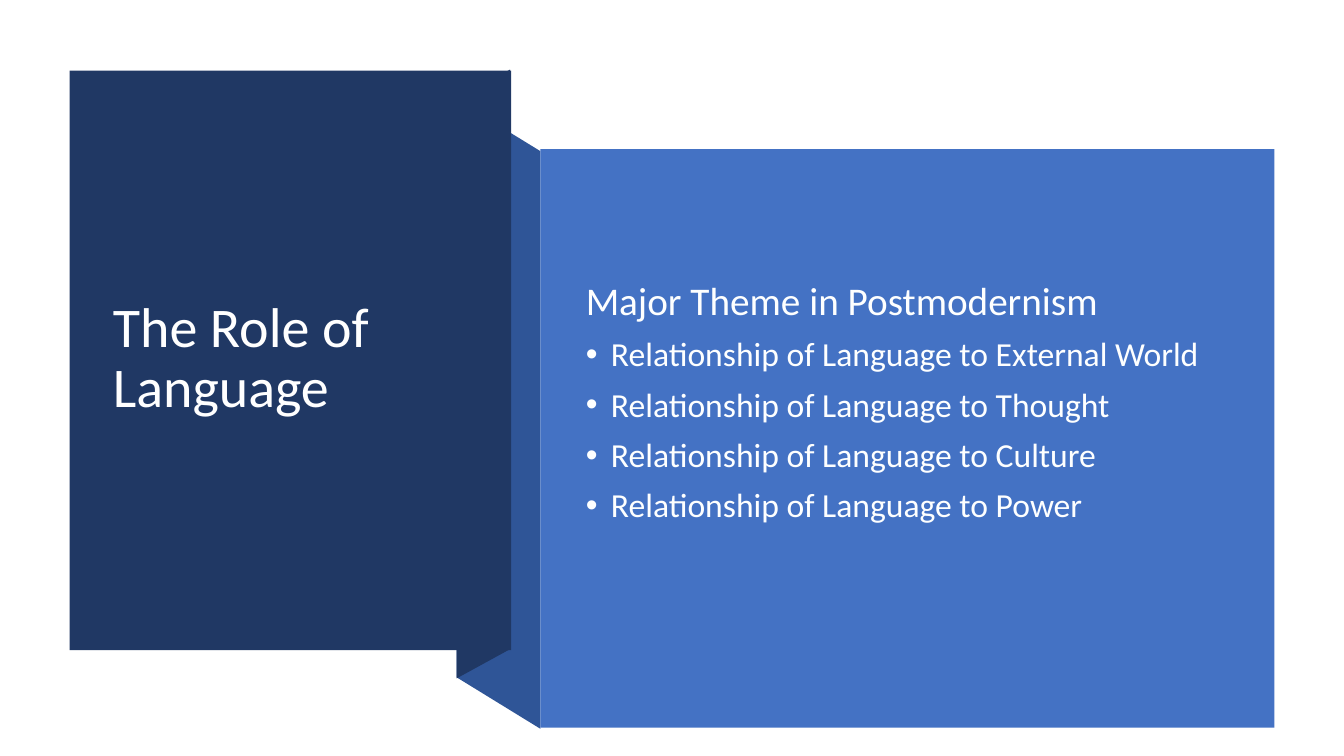
from dataclasses import dataclass

from lxml.etree import SubElement
from pptx import Presentation
from pptx.dml.color import RGBColor
from pptx.enum.shapes import MSO_SHAPE
from pptx.enum.text import MSO_ANCHOR, MSO_AUTO_SIZE, PP_ALIGN
from pptx.oxml.ns import qn
from pptx.util import Inches, Pt


@dataclass(frozen=True)
class Theme:
    """Colours and type sizes of the slide."""

    font: str = "Calibri"
    navy: str = "203864"
    fold: str = "2F5597"
    blue: str = "4472C4"
    title_color: str = "FFFFFF"
    body_color: str = "FEFFFF"
    title_size: int = 40
    lead_size: int = 28
    bullet_size: int = 24


THEME = Theme()
THEMES = ["External World", "Thought", "Culture", "Power"]


def paint(shape, color):
    """Give a shape a flat fill without line or shadow."""
    shape.shadow.inherit = False
    shape.fill.solid()
    shape.fill.fore_color.rgb = RGBColor.from_string(color)
    shape.line.fill.background()


def add_panel(page, box, color):
    """Draw a rectangle that fills the box."""
    paint(page.shapes.add_shape(MSO_SHAPE.RECTANGLE, *map(Inches, box)), color)


def add_fold(page, box, left_drop, right_drop, color):
    """Draw a slanted strip in the box, each side lowered by its drop."""
    left, top, width, height = box
    right = left + width
    side = height - max(left_drop, right_drop)
    corners = [
        (left, top + left_drop),
        (right, top + right_drop),
        (right, top + right_drop + side),
        (left, top + left_drop + side),
    ]
    points = [(Inches(x), Inches(y)) for x, y in corners]
    builder = page.shapes.build_freeform(*points[0])
    builder.add_line_segments(points[1:], close=True)
    paint(builder.convert_to_shape(), color)


def place_text(page, holder, box):
    """Move a placeholder into the box, in front of the panels."""
    page.shapes._spTree.append(holder._element)
    holder.left, holder.top, holder.width, holder.height = map(Inches, box)
    frame = holder.text_frame
    frame.word_wrap = True
    frame.auto_size = MSO_AUTO_SIZE.NONE
    frame.vertical_anchor = MSO_ANCHOR.MIDDLE
    return frame


def format_para(para, size, color):
    """Set the alignment, line spacing and font of a paragraph."""
    para.alignment = PP_ALIGN.LEFT
    para.line_spacing = 0.9
    for span in para.runs:
        span.font.name = THEME.font
        span.font.size = Pt(size)
        span.font.color.rgb = RGBColor.from_string(color)


def set_bullet(para, indent, mark=None):
    """Give a paragraph a hanging bullet, or none without a mark."""
    properties = para._p.get_or_add_pPr()
    properties.set("marL", str(Inches(indent)))
    properties.set("indent", str(-Inches(indent)))
    if mark:
        SubElement(properties, qn("a:buFont"), typeface="Arial")
        SubElement(properties, qn("a:buChar"), char=mark)
    else:
        SubElement(properties, qn("a:buNone"))


def add_title_region(page, box):
    """Draw the dark panel with the slide title."""
    left, top, width, height = box
    add_panel(page, box, THEME.navy)
    text_box = (left + 0.33, top + 0.37, width - 0.66, height - 0.76)
    frame = place_text(page, page.shapes.title, text_box)
    frame.text = "The Role of Language"
    para = frame.paragraphs[0]
    para.space_before = Pt(0)
    format_para(para, THEME.title_size, THEME.title_color)


def add_body_region(page, box):
    """Draw the blue panel with the lead line and its bullets."""
    left, top, width, height = box
    add_panel(page, box, THEME.blue)
    text_box = (left + 0.35, top + 0.4, width - 0.77, height - 1.5)
    frame = place_text(page, page.placeholders[1], text_box)
    bullets = [f"Relationship of Language to {theme}" for theme in THEMES]
    frame.text = "\n".join(["Major Theme in Postmodernism", *bullets])
    for index, para in enumerate(frame.paragraphs):
        size = THEME.bullet_size if index else THEME.lead_size
        format_para(para, size, THEME.body_color)
        para.space_before = Pt(10)
        if index:
            set_bullet(para, 0.25, "•")
        else:
            set_bullet(para, 0)


def main():
    """Build the slide and save the deck."""
    deck = Presentation()
    deck.slide_width, deck.slide_height = Inches(13.33), Inches(7.5)
    page = deck.slides.add_slide(deck.slide_layouts[1])
    add_fold(page, (4.53, 0.99, 0.83, 6.24), 0, 0.51, THEME.fold)
    add_fold(page, (4.53, 0.69, 0.53, 6.04), 0.29, 0, THEME.navy)
    add_title_region(page, (0.69, 0.7, 4.38, 5.75))
    add_body_region(page, (5.36, 1.48, 7.28, 5.74))
    deck.save("out.pptx")


if __name__ == "__main__":
    main()
